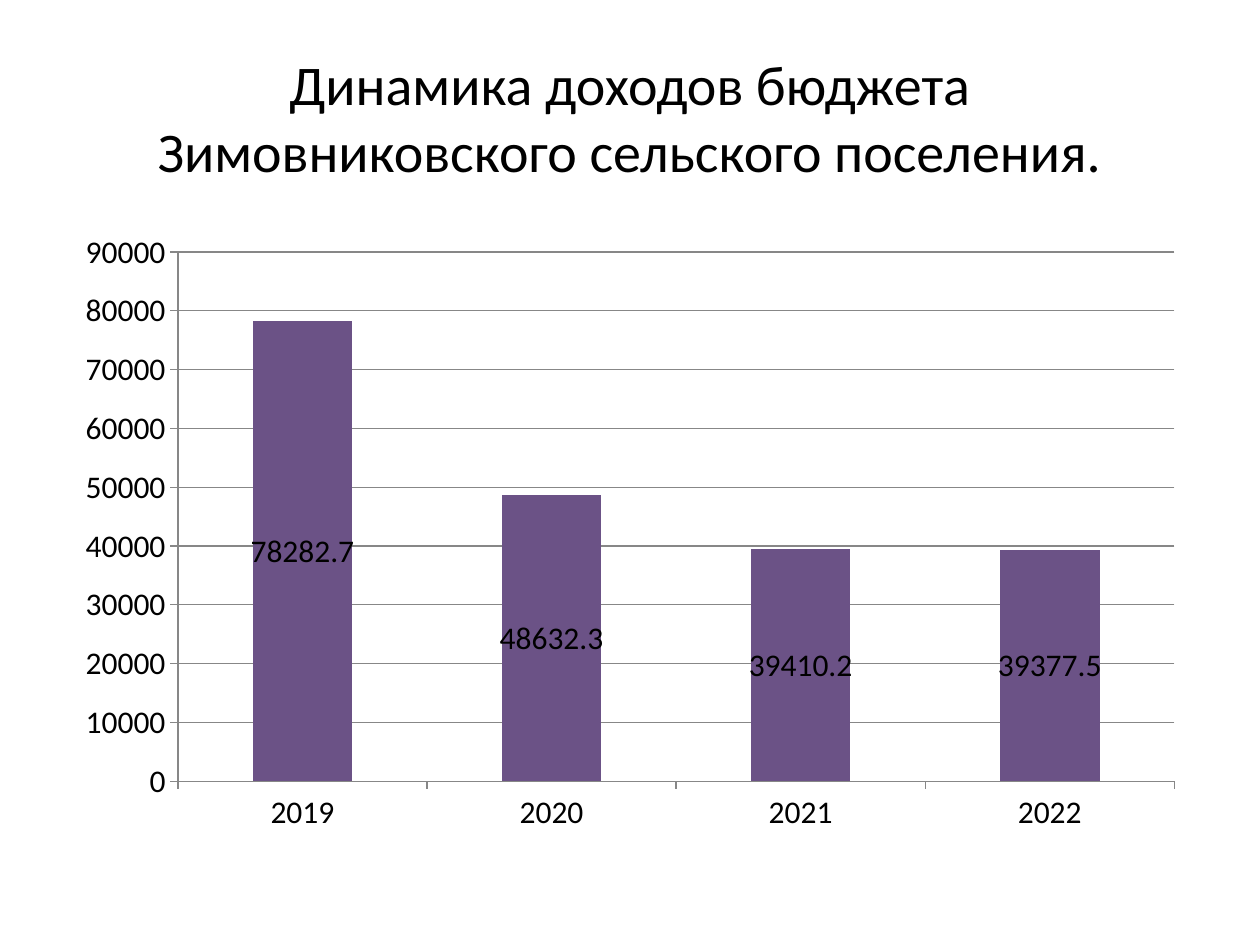
from pptx import Presentation
from pptx.chart.data import CategoryChartData
from pptx.dml.color import RGBColor
from pptx.enum.chart import XL_CHART_TYPE, XL_LABEL_POSITION, XL_TICK_MARK
from pptx.enum.text import MSO_ANCHOR, PP_ALIGN
from pptx.util import Pt

COLUMN_STACKED = XL_CHART_TYPE.COLUMN_STACKED
LABEL_CENTER = XL_LABEL_POSITION.CENTER
TICK_OUTSIDE = XL_TICK_MARK.OUTSIDE
ANCHOR_MIDDLE = MSO_ANCHOR.MIDDLE
ALIGN_CENTER = PP_ALIGN.CENTER

FONT_NAME = "Calibri"
TEXT_COLOR = "000000"
LINE_COLOR = "878787"
LEFT, WIDTH = Pt(36), Pt(648)

TITLE = "Динамика доходов бюджета Зимовниковского сельского поселения."
YEARS = ["2019", "2020", "2021", "2022"]
SERIES = [
    ("Series 1", [78282.7, 48632.3, 39410.2, 39377.5], "6B5286"),
    ("Series 2", [0, 0, 0, 0], "C0504D"),
    ("Series 3", [0, 0, 0, 0], "9BBB59"),
]


def color(hex_string):
    return RGBColor.from_string(hex_string)


def set_font(font, size):
    font.name = FONT_NAME
    font.size = Pt(size)
    font.color.rgb = color(TEXT_COLOR)


def set_line(line):
    line.color.rgb = color(LINE_COLOR)
    line.width = Pt(0.75)


def add_title(slide):
    title = slide.shapes.add_textbox(LEFT, Pt(21.6), WIDTH, Pt(90))
    frame = title.text_frame
    frame.word_wrap = True
    frame.vertical_anchor = ANCHOR_MIDDLE
    paragraph = frame.paragraphs[0]
    paragraph.text = TITLE
    paragraph.alignment = ALIGN_CENTER
    set_font(paragraph.font, 32)


def style_axes(chart):
    for axis in (chart.category_axis, chart.value_axis):
        axis.major_tick_mark = TICK_OUTSIDE
        set_line(axis.format.line)
    value_axis = chart.value_axis
    value_axis.minimum_scale = 0
    value_axis.maximum_scale = 90000
    value_axis.major_unit = 10000
    value_axis.has_major_gridlines = True
    set_line(value_axis.major_gridlines.format.line)


def add_income_chart(slide):
    data = CategoryChartData()
    data.categories = YEARS
    for name, values, _ in SERIES:
        data.add_series(name, values)
    chart = slide.shapes.add_chart(
        COLUMN_STACKED, LEFT, Pt(126), WIDTH, Pt(356.4), data
    ).chart
    chart.has_title = False
    chart.has_legend = False
    set_font(chart.font, 18)
    style_axes(chart)

    plot = chart.plots[0]
    plot.gap_width = 150
    plot.overlap = 100
    plot.vary_by_categories = False
    for series, (_, _, fill_color) in zip(plot.series, SERIES):
        series.format.fill.solid()
        series.format.fill.fore_color.rgb = color(fill_color)

    labels = plot.series[0].data_labels
    labels.show_value = True
    labels.position = LABEL_CENTER
    set_font(labels.font, 18)


def main():
    presentation = Presentation()
    presentation.slide_width = Pt(720)
    presentation.slide_height = Pt(540)
    slide = presentation.slides.add_slide(presentation.slide_layouts[6])
    add_title(slide)
    add_income_chart(slide)
    presentation.save("out.pptx")


if __name__ == "__main__":
    main()
